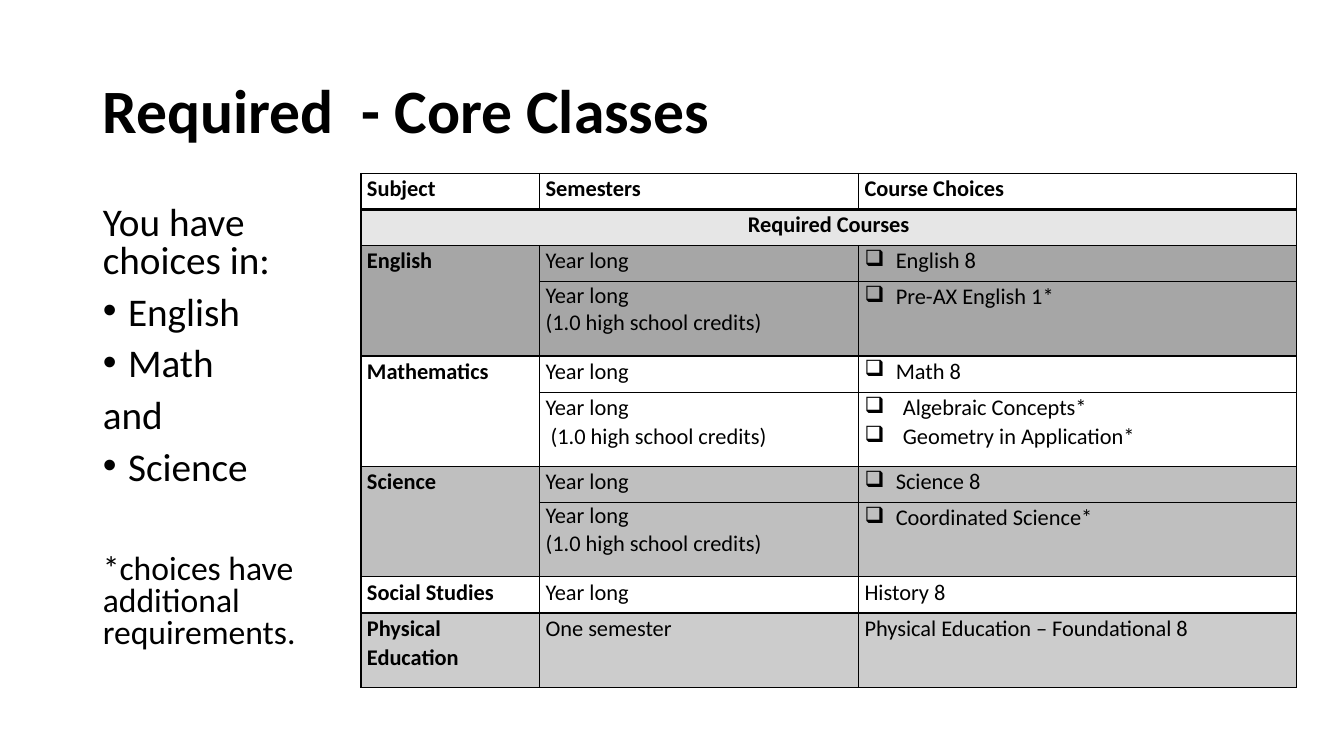
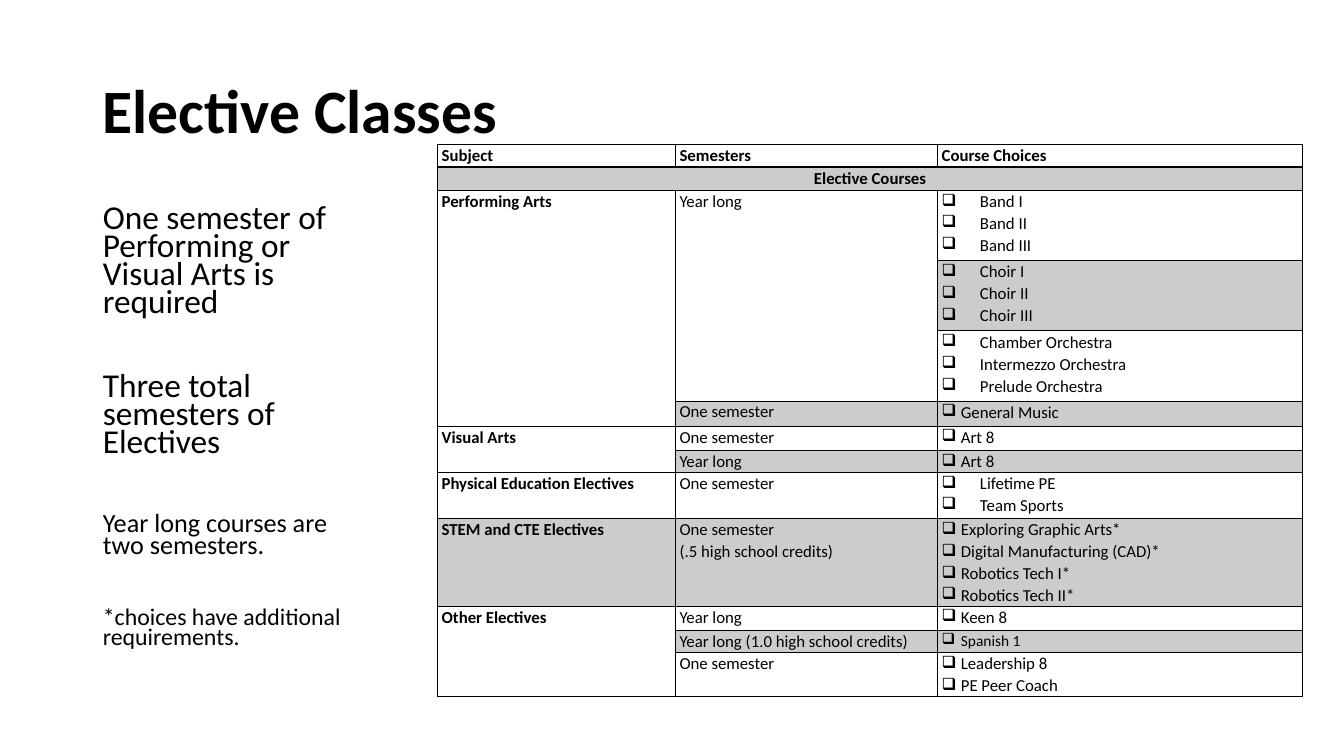
from dataclasses import dataclass

from lxml import etree
from pptx import Presentation
from pptx.dml.color import RGBColor
from pptx.enum.text import MSO_ANCHOR, MSO_AUTO_SIZE, PP_ALIGN
from pptx.oxml.ns import qn
from pptx.util import Inches, Pt

LEFT, CENTER = PP_ALIGN.LEFT, PP_ALIGN.CENTER
TOP, MIDDLE = MSO_ANCHOR.TOP, MSO_ANCHOR.MIDDLE
NO_FIT = MSO_AUTO_SIZE.NONE

# Shared look
FONT = "Calibri"
COLORS = {"ink": "000000", "white": "FFFFFF", "band": "E6E6E6",
          "dark": "A6A6A6", "mid": "BFBFBF", "light": "CCCCCC"}
SLIDE_W, SLIDE_H = 13.33, 7.5
MARGIN = 0.92
TITLE_BOX = (MARGIN, 0.4, SLIDE_W - 2 * MARGIN, 1.45)
ADVICE_BOX = (MARGIN, 2, 2.79, 4.76)
CHECKBOX = "❑"
HEADINGS = ("Subject", "Semesters", "Course Choices")


@dataclass
class Note:
    """A paragraph of the advice column."""
    text: str
    size: float
    before: float = 10
    bullet: bool = False


@dataclass
class Choices:
    """A table cell; an indent turns its lines into a checklist."""
    lines: tuple
    indent: float = 0
    size: float = None
    spacing: float = 1.07


def rgb(name):
    return RGBColor.from_string(COLORS[name])


def checks(*lines, indent=0.31, size=None):
    return Choices(lines, indent, size)


def tight(text):
    return Choices((text,), spacing=1.0)


def place(shape, box):
    shape.left, shape.top, shape.width, shape.height = map(Inches, box)


def style(paragraph, size, spacing, bold=False, align=LEFT):
    paragraph.alignment = align
    paragraph.line_spacing = spacing
    font = paragraph.font
    font.name, font.size, font.bold = FONT, Pt(size), bold
    font.color.rgb = rgb("ink")


def set_bullet(paragraph, char=None, indent=0):
    """Hang the paragraph behind a bullet, or remove bullet and indent."""
    props = paragraph._p.get_or_add_pPr()
    props.set("marL", str(Inches(indent)))
    props.set("indent", str(-Inches(indent)))
    bullet = etree.Element(qn("a:buChar" if char else "a:buNone"))
    if char:
        bullet.set("char", char)
    # Bullets come after spacing and before the default run properties
    run_props = props.find(qn("a:defRPr"))
    if run_props is None:
        props.append(bullet)
    else:
        run_props.addprevious(bullet)


def set_borders(cell, **widths):
    props = cell._tc.get_or_add_tcPr()
    for side in "LRTB":
        line = etree.SubElement(props, qn(f"a:ln{side}"),
                                w=str(Pt(widths.get(side, 1))))
        fill = etree.SubElement(line, qn("a:solidFill"))
        etree.SubElement(fill, qn("a:srgbClr"), val=COLORS["ink"])


def add_title(slide, text):
    title = slide.shapes.title
    frame = title.text_frame
    frame.text = text
    frame.vertical_anchor, frame.auto_size = MIDDLE, NO_FIT
    style(frame.paragraphs[0], 44, 0.9, bold=True)


def add_advice(slide, notes, spacing):
    frame = slide.placeholders[1].text_frame
    frame.vertical_anchor, frame.auto_size = TOP, NO_FIT
    frame.text = "\n".join(note.text for note in notes)
    for paragraph, note in zip(frame.paragraphs, notes):
        style(paragraph, note.size, spacing)
        paragraph.space_before = Pt(note.before)
        set_bullet(paragraph, *(("•", 0.25) if note.bullet else ()))


def fill_cell(cell, content, size, inset, bold, align):
    if isinstance(content, str):
        content = Choices((content,))
    cell.margin_left = cell.margin_right = Inches(inset)
    cell.margin_top = cell.margin_bottom = 0
    cell.text_frame.text = "\n".join(content.lines)
    for paragraph in cell.text_frame.paragraphs:
        style(paragraph, content.size or size, content.spacing, bold, align)
        if content.indent:
            set_bullet(paragraph, CHECKBOX, content.indent)


def add_courses(slide, box, columns, band, rows, size, inset):
    """Course table; None continues the cell above it.

    Columns and row heights are shares of the box; band is (text, colour).
    """
    head = rows[0][0]
    rows = [(head, "white", *HEADINGS), (head, band[1], band[0], None, None),
            *rows[1:]]
    left, top, width, height = box
    table = slide.shapes.add_table(len(rows), 3, *map(Inches, box)).table
    table.first_row = table.horz_banding = False
    for column, share in zip(table.columns, columns):
        column.width = Inches(width * share / sum(columns))
    total = sum(row[0] for row in rows)
    for r, (share, color, *contents) in enumerate(rows):
        table.rows[r].height = Inches(height * share / total)
        for c, content in enumerate(contents):
            cell = table.cell(r, c)
            set_borders(cell, T=2 if r == 1 else 1, B=2 if r == 0 else 1)
            cell.fill.solid()
            cell.fill.fore_color.rgb = rgb(color)
            if content is not None:
                fill_cell(cell, content, size, inset, r < 2 or c == 0,
                          CENTER if r == 1 else LEFT)
    # Merge the band across and the continued cells down
    table.cell(1, 0).merge(table.cell(1, 2))
    for c in range(3):
        start = 2
        for r in range(3, len(rows) + 1):
            if r == len(rows) or rows[r][2 + c] is not None:
                if r - start > 1:
                    table.cell(start, c).merge(table.cell(r - 1, c))
                start = r


def class_slide(prs, title, notes, spacing, **courses):
    slide = prs.slides.add_slide(prs.slide_layouts[1])
    add_title(slide, title)
    add_advice(slide, notes, spacing)
    add_courses(slide, **courses)


# Content: height, colour, subject, semesters, choices (first row: heading)
CREDITS = "Year long\v(1.0 high school credits)"
ONE, TWO = 0.36, 0.74
CORE_ROWS = [
    (ONE,),
    (ONE, "dark", "English", "Year long", checks("English 8")),
    (TWO, "dark", None, tight(CREDITS), checks("Pre-AX English 1*")),
    (ONE, "white", "Mathematics", "Year long", checks("Math 8")),
    (TWO, "white", None, Choices(("Year long", " (1.0 high school credits)")),
     checks("Algebraic Concepts*", "Geometry in Application*", indent=0.38)),
    (ONE, "mid", "Science", "Year long", checks("Science 8")),
    (TWO, "mid", None, tight(CREDITS), checks("Coordinated Science*")),
    (ONE, "white", "Social Studies", "Year long", "History 8"),
    (TWO, "light", "Physical Education", "One semester",
     "Physical Education – Foundational 8"),
]
CORE_NOTES = [
    Note("You have choices in:", 28),
    Note("English", 28, bullet=True),
    Note("Math", 28, bullet=True),
    Note("and", 28),
    Note("Science", 28, bullet=True),
    Note("*choices have additional requirements.", 24, before=47),
]

WIDE, NARROW = 0.38, 0.19
ELECTIVE_ROWS = [
    (0.23,),
    (0.7, "white", "Performing Arts", "Year long",
     checks("Band I", "Band II", "Band III", indent=WIDE)),
    (0.7, "light", None, None,
     checks("Choir I", "Choir II", "Choir III", indent=WIDE)),
    (0.7, "white", None, None,
     checks("Chamber Orchestra", "Intermezzo Orchestra", "Prelude Orchestra",
            indent=WIDE)),
    (0.25, "light", None, tight("One semester"),
     checks("General Music", indent=NARROW)),
    (0.24, "white", "Visual Arts", "One semester",
     checks("Art 8", indent=NARROW)),
    (0.22, "light", None, "Year long", checks("Art 8", indent=NARROW)),
    (0.46, "white", "Physical Education Electives", "One semester",
     checks("Lifetime PE", "Team Sports", indent=WIDE)),
    (0.87, "light", "STEM and CTE Electives",
     Choices(("One semester", "(.5 high school credits)")),
     checks("Exploring Graphic Arts*", "Digital Manufacturing (CAD)*",
            "Robotics Tech I*", "Robotics Tech II*", indent=NARROW)),
    (0.24, "white", "Other Electives", "Year long",
     checks("Keen 8", indent=NARROW)),
    (0.22, "light", None, "Year long (1.0 high school credits)",
     checks("Spanish 1", indent=NARROW, size=11)),
    (0.44, "white", None, "One semester",
     checks("Leadership 8", "PE Peer Coach", indent=NARROW)),
]
ELECTIVE_NOTES = [
    Note("One semester of Performing or Visual Arts is required", 23.8),
    Note("Three total semesters of Electives", 23.8, before=40),
    Note("Year long courses are two semesters.", 18.7, before=40),
    Note("*choices have additional requirements.", 17, before=36),
]


def main():
    prs = Presentation()
    prs.slide_width, prs.slide_height = Inches(SLIDE_W), Inches(SLIDE_H)
    # Title and advice places, inherited by both slides
    layout = prs.slide_layouts[1]
    for holder, box in zip(layout.placeholders, (TITLE_BOX, ADVICE_BOX)):
        place(holder, box)

    class_slide(prs, "Required\u00a0 - Core Classes".replace("\u00a0", " "),
                CORE_NOTES, 0.8, box=(3.58, 1.72, 9.28, 5.1),
                columns=(1.77, 3.16, 4.34),
                band=("Required Courses", "band"), rows=CORE_ROWS,
                size=16, inset=0.06)
    class_slide(prs, "Elective Classes", ELECTIVE_NOTES, 0.7,
                box=(4.34, 1.43, 8.58, 5.48), columns=(2.36, 2.6, 3.62),
                band=("Elective Courses", "light"), rows=ELECTIVE_ROWS,
                size=12, inset=0.04)
    prs.save("out.pptx")


if __name__ == "__main__":
    main()
